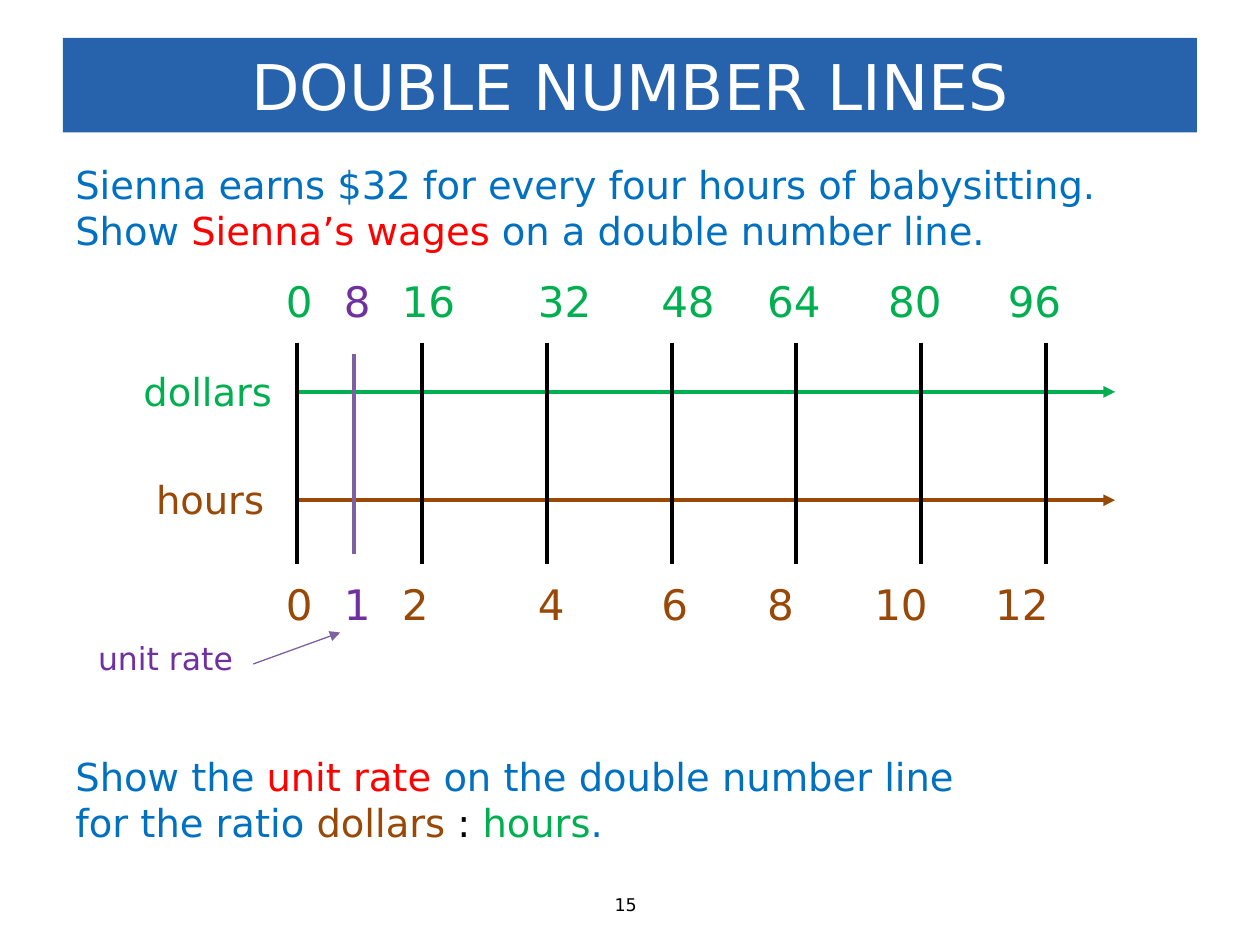
import pptx
import pptx.util
import pptx.dml.color
import pptx.enum.shapes
import pptx.enum.text
import pptx.oxml
import pptx.oxml.ns

THEME = {
    "font": "DejaVu Sans",
    "colours": {
        "banner": "2762AD", "white": "FFFFFF", "black": "000000",
        "body": "0070C0", "key": "FF0000", "dollars": "00B050",
        "hours": "984807", "unit": "7030A0", "unit line": "7D60A0",
    },
    "sizes": {"title": 36, "body": 22, "value": 24, "note": 18, "page": 10},
    "thick": 2.25, "thin": 0.75,
}

# Content: each paragraph is a list of (text, colour) runs; "\n" breaks a line.
TITLE = "DOUBLE NUMBER LINES"
PROBLEM = [
    [("Sienna earns $32 for every four hours of babysitting.", "body")],
    [("Show ", "body"), ("Sienna’s wages ", "key"),
     ("on a double number line.", "body")],
]
QUESTION = [[
    ("Show the ", "body"), ("unit rate ", "key"),
    ("on the double number line", "body"), ("\n", "body"),
    ("for the ratio ", "body"), ("dollars ", "hours"), (": ", "black"),
    ("hours", "dollars"), (".", "body"),
]]
# name, line height on the slide, left of its label
SCALES = [("dollars", 3.11, 1.04), ("hours", 3.97, 1.14)]
# dollars, left of its label, hours, left of its label
VALUES = [
    ("0", 2.17, "0", 2.17), ("16", 3.09, "2", 3.09), ("32", 4.17, "4", 4.17),
    ("48", 5.15, "6", 5.15), ("64", 5.99, "8", 5.99),
    ("80", 6.95, "10", 6.84), ("96", 7.9, "12", 7.8),
]
UNIT_DOLLARS, UNIT_HOURS, UNIT_NOTE, PAGE = "8", "1", "unit rate", "15"

WIDTH, HEIGHT = 10, 7.5
MARGIN = 0.05 * WIDTH
AXIS_LEFT, AXIS_RIGHT, TICK_GAP = 2.36, 8.85, 0.99
TICK_TOP, TICK_BOTTOM = 2.72, 4.48
DOLLAR_ROW, HOUR_ROW = 2.14, 4.54
UNIT_LABEL_LEFT, UNIT_TICK = 2.63, 2.81
VALUE_BOX = (0.69, 0.49)


def inches(*lengths):
    return [pptx.util.Inches(length) for length in lengths]


def colour(name):
    return pptx.dml.color.RGBColor.from_string(THEME["colours"][name])


def write(shape, paragraphs, size, alignment=None):
    for index, runs in enumerate(paragraphs):
        frame = shape.text_frame
        paragraph = frame.add_paragraph() if index else frame.paragraphs[0]
        paragraph.font.name = THEME["font"]
        paragraph.font.size = pptx.util.Pt(THEME["sizes"][size])
        paragraph.alignment = alignment
        for text, name in runs:
            if text == "\n":
                paragraph.add_line_break()
                continue
            run = paragraph.add_run()
            run.text = text
            run.font.color.rgb = colour(name)


def add_text(slide, box, paragraphs, size):
    shape = slide.shapes.add_textbox(*inches(*box))
    shape.text_frame.word_wrap = True
    write(shape, paragraphs, size)


def add_line(slide, start, end, name, weight="thick", arrow=False):
    line = slide.shapes.add_connector(
        pptx.enum.shapes.MSO_CONNECTOR.STRAIGHT, *inches(*start, *end))
    line.line.color.rgb = colour(name)
    line.line.width = pptx.util.Pt(THEME[weight])
    properties = line._element.spPr
    if arrow:
        head = pptx.oxml.parse_xml(
            f'<a:tailEnd {pptx.oxml.ns.nsdecls("a")} type="triangle"/>')
        line.line._get_or_add_ln().append(head)
    properties.append(pptx.oxml.parse_xml(
        f'<a:effectLst {pptx.oxml.ns.nsdecls("a")}/>'))


def add_title(slide):
    banner = slide.shapes.add_shape(
        pptx.enum.shapes.MSO_SHAPE.RECTANGLE,
        *inches(MARGIN, 0.04 * HEIGHT, WIDTH - 2 * MARGIN, 0.1 * HEIGHT))
    banner.shadow.inherit = False
    banner.fill.solid()
    banner.fill.fore_color.rgb = colour("banner")
    banner.line.fill.background()
    banner.text_frame.vertical_anchor = pptx.enum.text.MSO_ANCHOR.MIDDLE
    write(banner, [[(TITLE, "white")]], "title",
          pptx.enum.text.PP_ALIGN.CENTER)


def add_value_pair(slide, dollars, dollars_left, hours, hours_left, names):
    for text, left, top, name in ((dollars, dollars_left, DOLLAR_ROW, names[0]),
                                  (hours, hours_left, HOUR_ROW, names[1])):
        add_text(slide, (left, top, *VALUE_BOX), [[(text, name)]], "value")


def add_number_lines(slide):
    for name, y, label_left in SCALES:
        add_line(slide, (AXIS_LEFT, y), (AXIS_RIGHT, y), name, arrow=True)
        add_text(slide, (label_left, y - 0.24, 1.3, 0.47),
                 [[(name, name)]], "body")
    for index, value in enumerate(VALUES):
        x = AXIS_LEFT + index * TICK_GAP
        add_line(slide, (x, TICK_TOP), (x, TICK_BOTTOM), "black")
        add_value_pair(slide, *value, ("dollars", "hours"))


def add_unit_rate(slide):
    add_line(slide, (UNIT_TICK, TICK_TOP + 0.09),
             (UNIT_TICK, TICK_BOTTOM - 0.08), "unit line")
    add_value_pair(slide, UNIT_DOLLARS, UNIT_LABEL_LEFT,
                   UNIT_HOURS, UNIT_LABEL_LEFT, ("unit", "unit"))
    add_text(slide, (0.68, 5.02, 2.23, 0.4), [[(UNIT_NOTE, "unit")]], "note")
    add_line(slide, (2.01, 5.27), (2.7, 5.02), "unit line", "thin", arrow=True)


def main():
    presentation = pptx.Presentation()
    presentation.slide_width, presentation.slide_height = inches(WIDTH, HEIGHT)
    slide = presentation.slides.add_slide(presentation.slide_layouts[6])
    add_text(slide, (4.78, 7.05, 0.44, 0.27), [[(PAGE, "black")]], "page")
    add_title(slide)
    add_number_lines(slide)
    add_text(slide, (MARGIN, 1.23, 8.94, 0.84), PROBLEM, "body")
    add_text(slide, (MARGIN, 5.93, 8.35, 0.84), QUESTION, "body")
    add_unit_rate(slide)
    presentation.save("out.pptx")


if __name__ == "__main__":
    main()
